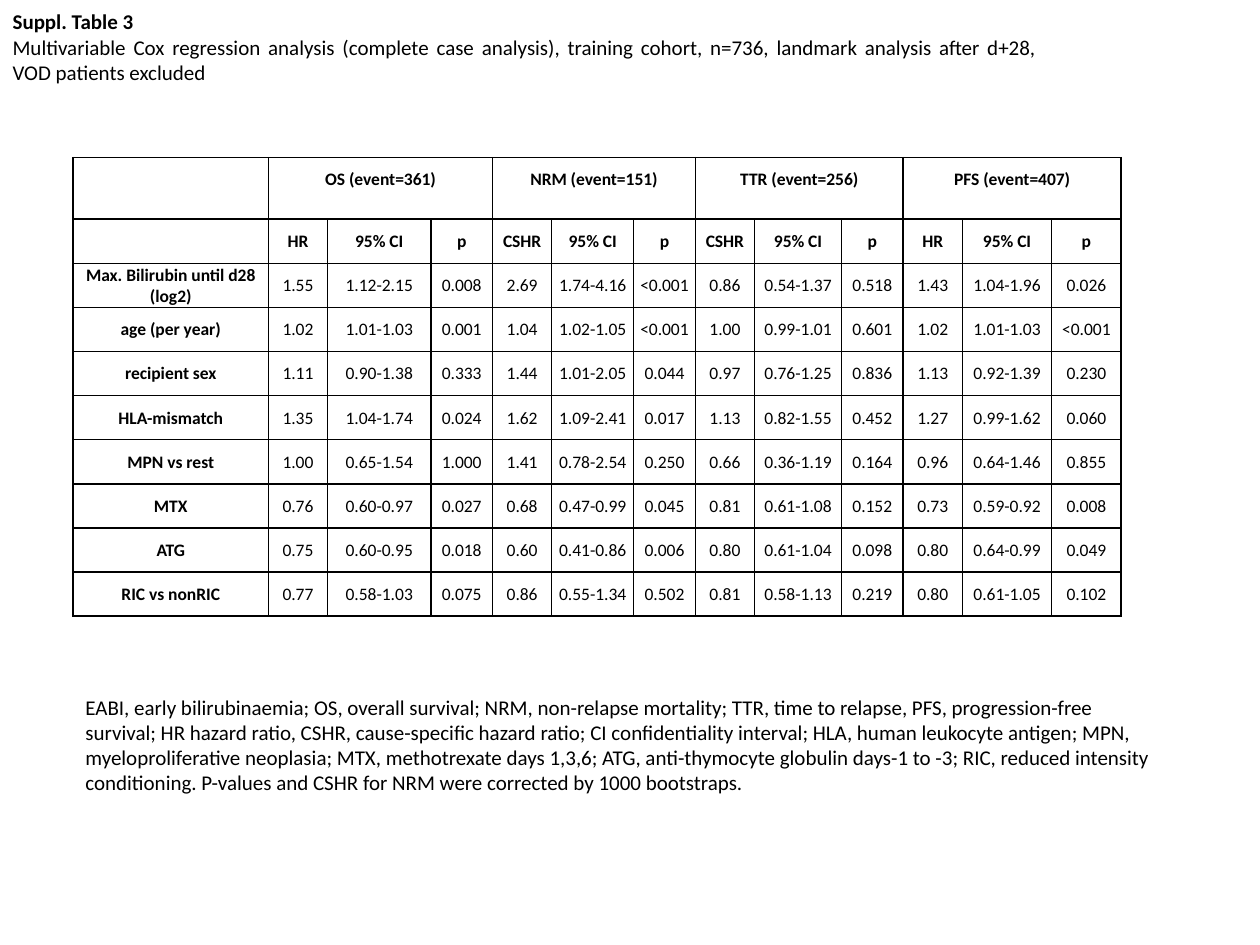
from lxml import etree
from pptx import Presentation
from pptx import util as u
from pptx.dml import color
from pptx.enum import shapes, text
from pptx.oxml import ns

COLUMN_WIDTHS = [1.55, 0.47, 0.82, 0.49, 0.47, 0.65, 0.49,
                 0.47, 0.69, 0.49, 0.47, 0.71, 0.55]
HEADER_HEIGHT, ROW_HEIGHT = 0.49, 0.35
OUTCOMES = [("OS (event=361)", "HR"), ("NRM (event=151)", "CSHR"),
            ("TTR (event=256)", "CSHR"), ("PFS (event=407)", "HR")]
RESULTS = {
    "Max. Bilirubin until d28 (log2)":
        "1.55 1.12-2.15 0.008 2.69 1.74-4.16 <0.001 0.86 0.54-1.37 0.518 1.43 1.04-1.96 0.026",
    "age (per year)":
        "1.02 1.01-1.03 0.001 1.04 1.02-1.05 <0.001 1.00 0.99-1.01 0.601 1.02 1.01-1.03 <0.001",
    "recipient sex":
        "1.11 0.90-1.38 0.333 1.44 1.01-2.05 0.044 0.97 0.76-1.25 0.836 1.13 0.92-1.39 0.230",
    "HLA-mismatch":
        "1.35 1.04-1.74 0.024 1.62 1.09-2.41 0.017 1.13 0.82-1.55 0.452 1.27 0.99-1.62 0.060",
    "MPN vs rest":
        "1.00 0.65-1.54 1.000 1.41 0.78-2.54 0.250 0.66 0.36-1.19 0.164 0.96 0.64-1.46 0.855",
    "MTX":
        "0.76 0.60-0.97 0.027 0.68 0.47-0.99 0.045 0.81 0.61-1.08 0.152 0.73 0.59-0.92 0.008",
    "ATG":
        "0.75 0.60-0.95 0.018 0.60 0.41-0.86 0.006 0.80 0.61-1.04 0.098 0.80 0.64-0.99 0.049",
    "RIC vs nonRIC":
        "0.77 0.58-1.03 0.075 0.86 0.55-1.34 0.502 0.81 0.58-1.13 0.219 0.80 0.61-1.05 0.102",
}
TITLE = "Suppl. Table 3"
SUBTITLE = ("Multivariable Cox regression analysis (complete case analysis), training cohort, "
            "n=736, landmark analysis after d+28, VOD patients excluded")
ABBREVIATIONS = (
    "EABI, early bilirubinaemia; OS, overall survival; NRM, non-relapse mortality; TTR, time to "
    "relapse, PFS, progression-free survival; HR hazard ratio, CSHR, cause-specific hazard ratio; "
    "CI confidentiality interval; HLA, human leukocyte antigen; MPN, myeloproliferative neoplasia; "
    "MTX, methotrexate days 1,3,6; ATG, anti-thymocyte globulin days-1 to -3; RIC, reduced "
    "intensity conditioning. P-values and CSHR for NRM were corrected by 1000 bootstraps.")


def rgb(value):
    return color.RGBColor.from_string(value)


class TableSlide:
    font = "Calibri"
    ink = "000000"
    paper = "FFFFFF"
    body_size = 12
    cell_size = 10

    def __init__(self, slide):
        self.slide = slide

    def add_text(self, paragraph, words, size, bold=False, align=text.PP_ALIGN.LEFT):
        paragraph.alignment = align
        run = paragraph.add_run()
        run.text = words
        run.font.name = self.font
        run.font.size = u.Pt(size)
        run.font.bold = bold
        run.font.color.rgb = rgb(self.ink)

    def title(self, heading, subtitle, left, top, width, height):
        shape = self.slide.shapes.title
        shape.left, shape.top = u.Inches(left), u.Inches(top)
        shape.width, shape.height = u.Inches(width), u.Inches(height)
        frame = shape.text_frame
        frame.auto_size = text.MSO_AUTO_SIZE.NONE
        frame.vertical_anchor = text.MSO_ANCHOR.TOP
        justify = text.PP_ALIGN.JUSTIFY
        self.add_text(frame.paragraphs[0], heading, self.body_size, True, justify)
        self.add_text(frame.add_paragraph(), subtitle, self.body_size, False, justify)

    def note(self, words, left, top, width, height):
        shape = self.slide.shapes.add_shape(
            shapes.MSO_SHAPE.RECTANGLE,
            u.Inches(left), u.Inches(top), u.Inches(width), u.Inches(height))
        shape.shadow.inherit = False
        shape.fill.solid()
        shape.fill.fore_color.rgb = rgb(self.paper)
        shape.line.fill.background()
        frame = shape.text_frame
        frame.word_wrap = True
        frame.vertical_anchor = text.MSO_ANCHOR.TOP
        self.add_text(frame.paragraphs[0], words, self.body_size)

    def border(self, cell):
        properties = cell._tc.get_or_add_tcPr()
        for side in ("a:lnL", "a:lnR", "a:lnT", "a:lnB"):
            line = etree.SubElement(properties, ns.qn(side), w=str(u.Pt(1)))
            fill = etree.SubElement(line, ns.qn("a:solidFill"))
            etree.SubElement(fill, ns.qn("a:srgbClr"), val=self.ink)

    def cell(self, cell, words, bold, spacing):
        cell.margin_left = cell.margin_right = cell.margin_top = u.Inches(0.01)
        cell.margin_bottom = 0
        cell.vertical_anchor = text.MSO_ANCHOR.TOP
        self.border(cell)
        cell.fill.background()
        if words:
            paragraph = cell.text_frame.paragraphs[0]
            paragraph.line_spacing = spacing
            self.add_text(paragraph, words, self.cell_size, bold, text.PP_ALIGN.CENTER)

    def table(self, rows, widths, heights, left, top):
        table = self.slide.shapes.add_table(
            len(rows), len(widths), u.Inches(left), u.Inches(top),
            u.Inches(sum(widths)), u.Inches(sum(heights))).table
        table.first_row = table.horz_banding = False
        for column, width in zip(table.columns, widths):
            column.width = u.Inches(width)
        for row, height in zip(table.rows, heights):
            row.height = u.Inches(height)
        for i, row in enumerate(rows):
            for j, words in enumerate(row):
                wraps = j == 0 and len(words) > 20
                self.cell(table.cell(i, j), words, i < 2 or j == 0, 1.0 if wraps else 1.5)
        for j in range(1, len(widths), 3):
            table.cell(0, j).merge(table.cell(0, j + 2))


def table_rows():
    groups, measures = [""], [""]
    for outcome, ratio in OUTCOMES:
        groups += [outcome, "", ""]
        measures += [ratio, "95% CI", "p"]
    return [groups, measures] + [[name, *values.split()] for name, values in RESULTS.items()]


def main():
    presentation = Presentation()
    presentation.slide_width, presentation.slide_height = u.Inches(10), u.Inches(7.5)
    page = TableSlide(presentation.slides.add_slide(presentation.slide_layouts[5]))
    page.title(TITLE, SUBTITLE, 0, 0.02, 8.33, 1.11)
    rows = table_rows()
    heights = [HEADER_HEIGHT] + [ROW_HEIGHT] * (len(rows) - 1)
    page.table(rows, COLUMN_WIDTHS, heights, 0.58, 1.25)
    page.note(ABBREVIATIONS, 0.58, 5.46, 8.67, 0.91)
    presentation.save("out.pptx")


if __name__ == "__main__":
    main()
